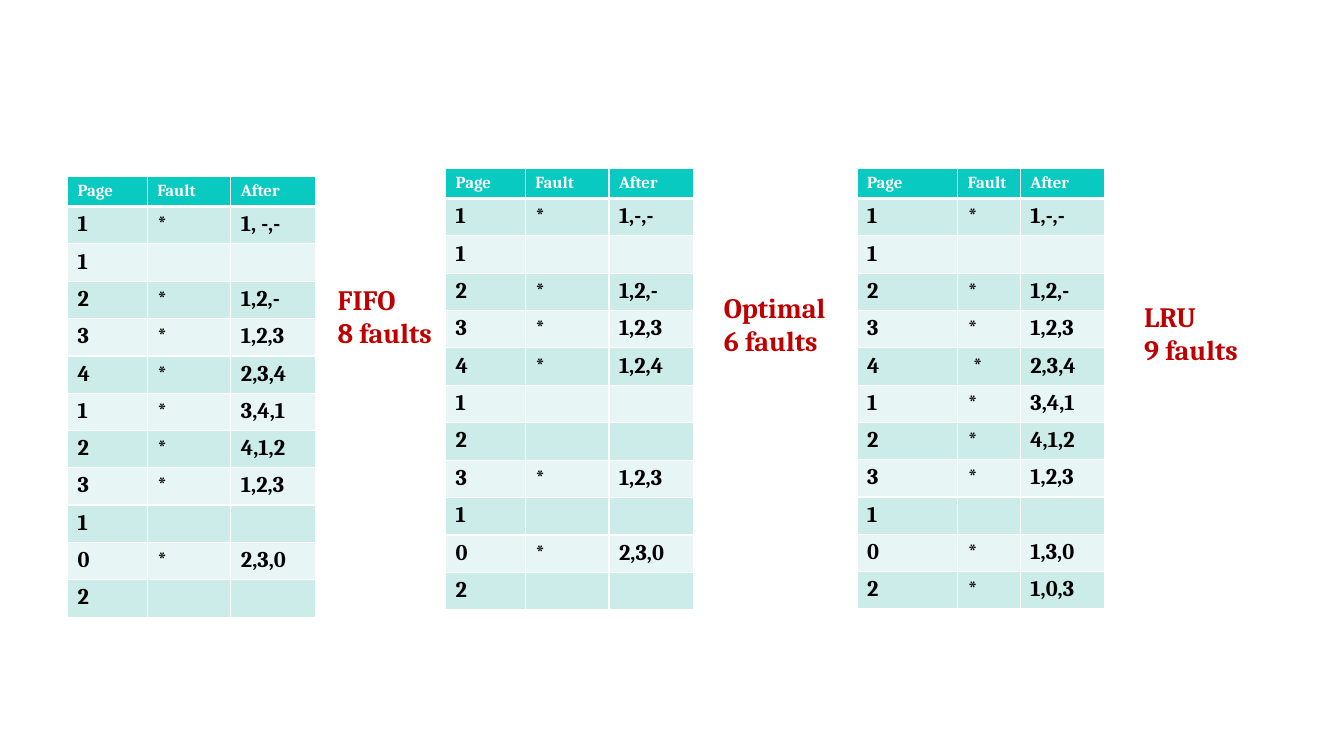
import dataclasses

import lxml.etree
import pptx
import pptx.dml.color
import pptx.oxml.ns
import pptx.util

Inches = pptx.util.Inches


@dataclasses.dataclass(frozen=True)
class Theme:
    font: str = "Cambria"
    header_fill: str = "08CAC1"
    band_fills: tuple = ("CCECE9", "E7F6F4")
    border: str = "FFFFFF"
    header_text: str = "FFFFFF"
    body_text: str = "000000"
    accent: str = "C00000"
    header_size: int = 12
    body_size: int = 16
    label_size: int = 20


def color(value):
    return pptx.dml.color.RGBColor.from_string(value)


def write_text(paragraph, text, *, font, size, text_color, bold=True):
    """Add one formatted run; an empty text only fixes the line height."""
    if not text:
        lxml.etree.SubElement(paragraph._p, pptx.oxml.ns.qn("a:endParaRPr"), sz=str(size * 100))
        return
    run = paragraph.add_run()
    run.text = text
    run.font.name = font
    run.font.size = pptx.util.Pt(size)
    run.font.bold = bold
    run.font.color.rgb = color(text_color)


class SlideBuilder:
    def __init__(self, slide, theme):
        self.slide = slide
        self.theme = theme

    def border(self, cell, side, width):
        qn = pptx.oxml.ns.qn
        line = lxml.etree.SubElement(cell._tc.get_or_add_tcPr(), qn(f"a:ln{side}"),
                                     w=str(pptx.util.Pt(width)))
        fill = lxml.etree.SubElement(line, qn("a:solidFill"))
        lxml.etree.SubElement(fill, qn("a:srgbClr"), val=self.theme.border)

    def cell(self, cell, text, row):
        theme = self.theme
        is_header = row == 0
        # Thick rule between the header and the first body row
        widths = {"L": 1, "R": 1, "T": 3 if row == 1 else 1, "B": 3 if is_header else 1}
        for side, width in widths.items():
            self.border(cell, side, width)
        cell.fill.solid()
        cell.fill.fore_color.rgb = color(
            theme.header_fill if is_header else theme.band_fills[(row - 1) % 2])
        write_text(cell.text_frame.paragraphs[0], text, font=theme.font,
                   size=theme.header_size if is_header else theme.body_size,
                   text_color=theme.header_text if is_header else theme.body_text)

    def table(self, left, top, column_widths, rows, header_height=0.3, row_height=0.37):
        height = header_height + row_height * (len(rows) - 1)
        frame = self.slide.shapes.add_table(
            len(rows), len(column_widths), Inches(left), Inches(top),
            Inches(sum(column_widths)), Inches(height))
        table = frame.table
        for column, width in zip(table.columns, column_widths):
            column.width = Inches(width)
        for index, values in enumerate(rows):
            table.rows[index].height = Inches(row_height if index else header_height)
            for column, text in enumerate(values):
                self.cell(table.cell(index, column), text, index)
        return table

    def label(self, left, top, width, lines):
        box = self.slide.shapes.add_textbox(Inches(left), Inches(top), Inches(width), Inches(0.77))
        frame = box.text_frame
        frame.word_wrap = True
        for index, text in enumerate(lines):
            paragraph = frame.add_paragraph() if index else frame.paragraphs[0]
            write_text(paragraph, text, font=self.theme.font, size=self.theme.label_size,
                       text_color=self.theme.accent)


# Page requests and the frames after each fault (empty where the page was a hit)
HEADER = ("Page", "Fault", "After")
PAGES = "1 1 2 3 4 1 2 3 1 0 2".split()
FIFO = ["1, -,-", "", "1,2,-", "1,2,3", "2,3,4", "3,4,1", "4,1,2", "1,2,3", "", "2,3,0", ""]
OPTIMAL = ["1,-,-", "", "1,2,-", "1,2,3", "1,2,4", "", "", "1,2,3", "", "2,3,0", ""]
LRU = ["1,-,-", "", "1,2,-", "1,2,3", "2,3,4", "3,4,1", "4,1,2", "1,2,3", "", "1,3,0", "1,0,3"]


def trace(frames):
    return [HEADER] + [(page, "*" if after else "", after) for page, after in zip(PAGES, frames)]


def main():
    presentation = pptx.Presentation()
    presentation.slide_width = Inches(13.33)
    presentation.slide_height = Inches(7.5)
    slide = presentation.slides.add_slide(presentation.slide_layouts[6])
    builder = SlideBuilder(slide, Theme())

    # Page replacement tables
    even_columns = (0.79, 0.83, 0.84)
    builder.table(0.67, 1.75, even_columns, trace(FIFO))
    builder.table(4.42, 1.67, even_columns, trace(OPTIMAL))
    lru_table = builder.table(8.5, 1.67, (1, 0.62, 0.84), trace(LRU))
    lru_table.cell(5, 1).margin_left = Inches(0.15)

    # Fault counts
    builder.label(3.25, 2.75, 1.25, ("FIFO", "8 faults"))
    builder.label(7.08, 2.83, 1.42, ("Optimal", "6 faults"))
    builder.label(11.25, 2.92, 1.25, ("LRU", "9 faults"))

    presentation.save("out.pptx")


if __name__ == "__main__":
    main()
